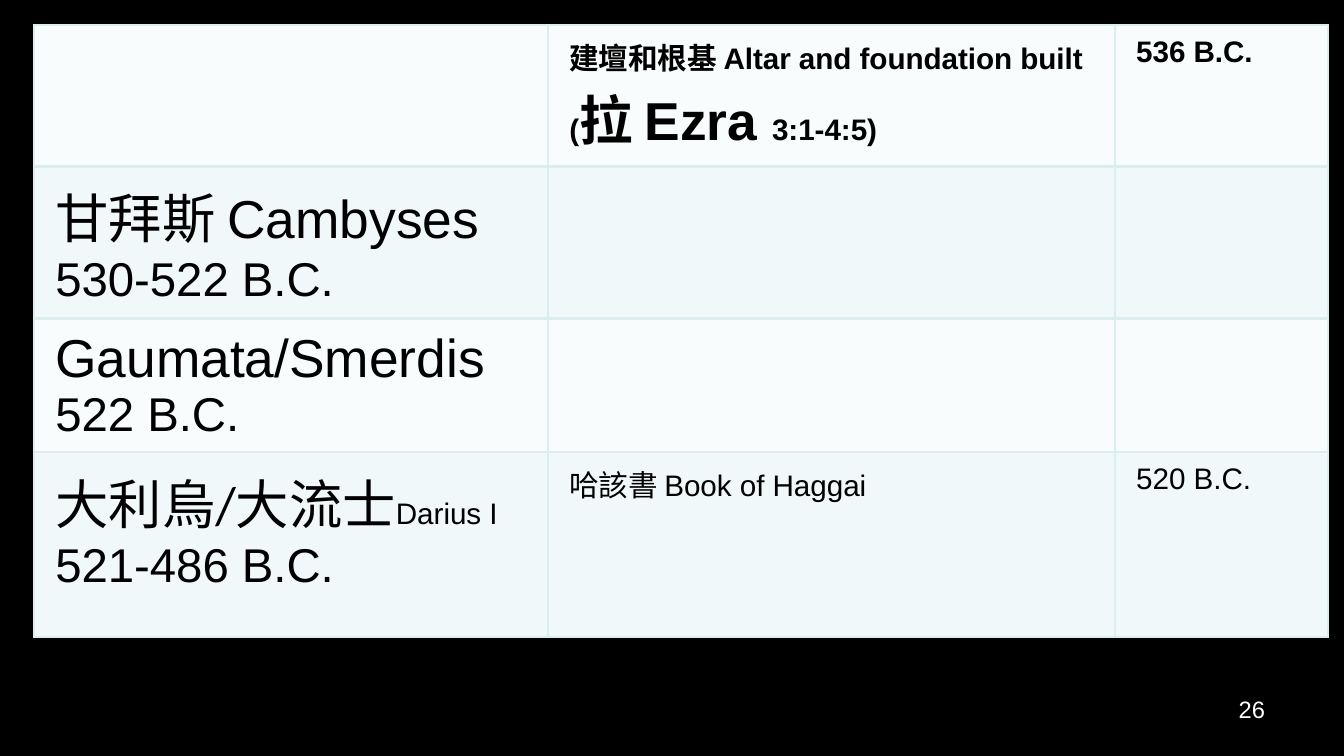
from dataclasses import dataclass

from lxml.etree import SubElement
from pptx import Presentation
from pptx.dml.color import RGBColor
from pptx.enum.text import PP_ALIGN as Align
from pptx.oxml.ns import qn
from pptx.util import Emu, Pt

EMU_PER_PX = 4286.25
COLORS = {
    "background": "000000",
    "text": "000000",
    "number": "FFFFFF",
    "border": "DAEDEF",
    "light": "F8FCFC",
    "tint": "F1F8F9",
}
LATIN, HAN = "Arial", "Calibri"
COL_WIDTHS = [514, 567, 213]
ROW_HEIGHTS = [141, 152, 133, 185]


@dataclass(frozen=True)
class Run:
    text: str
    size: int = 10
    font: str = LATIN
    bold: bool = False


@dataclass(frozen=True)
class Entry:
    row: int
    col: int
    lines: list[list[Run]]


ENTRIES = [
    Entry(0, 1, [[
        Run("建壇和根基 ", font=HAN, bold=True),
        Run("Altar and foundation built (", bold=True),
        Run("拉 ", 18, HAN, True),
        Run("Ezra ", 18, bold=True),
        Run("3:1-4:5)", bold=True),
    ]]),
    Entry(0, 2, [[Run("536 B.C.", bold=True)]]),
    Entry(1, 0, [[Run("甘拜斯 ", 18, HAN), Run("Cambyses", 18)],
                 [Run("530-522 B.C.", 16)]]),
    Entry(2, 0, [[Run("Gaumata/Smerdis", 18)], [Run("522 B.C.", 16)]]),
    Entry(3, 0, [[Run("大利烏/大流士", 18, HAN), Run("Darius I")],
                 [Run("521-486 B.C.", 16)]]),
    Entry(3, 1, [[Run("哈該書 ", font=HAN), Run("Book of Haggai")]]),
    Entry(3, 2, [[Run("520 B.C.")]]),
]


def px(n: int) -> Emu:
    return Emu(round(n * EMU_PER_PX))


def rgb(name: str) -> RGBColor:
    return RGBColor.from_string(COLORS[name])


def add_text(p, text: str, *, size: int = 10, font: str = LATIN,
             bold: bool = False, color: str = "text") -> None:
    r = p.add_run()
    r.text = text
    r.font.size = Pt(size)
    r.font.name = font
    r.font.bold = bold
    r.font.color.rgb = rgb(color)


def style_cell(cell, fill: str) -> None:
    tc_pr = cell._tc.get_or_add_tcPr()
    for side in ("lnL", "lnR", "lnT", "lnB"):
        ln = SubElement(tc_pr, qn(f"a:{side}"), w=str(Pt(1)))
        solid = SubElement(ln, qn("a:solidFill"))
        SubElement(solid, qn("a:srgbClr"), val=COLORS["border"])
    cell.fill.solid()
    cell.fill.fore_color.rgb = rgb(fill)


def add_timeline(slide) -> None:
    frame = slide.shapes.add_table(
        len(ROW_HEIGHTS), len(COL_WIDTHS), px(34), px(25),
        px(sum(COL_WIDTHS)), px(sum(ROW_HEIGHTS)))
    table = frame.table
    table.first_row = table.horz_banding = False
    for column, width in zip(table.columns, COL_WIDTHS):
        column.width = px(width)
    for i, (row, height) in enumerate(zip(table.rows, ROW_HEIGHTS)):
        row.height = px(height)
        for cell in row.cells:
            style_cell(cell, "tint" if i % 2 else "light")
    for entry in ENTRIES:
        tf = table.cell(entry.row, entry.col).text_frame
        for i, line in enumerate(entry.lines):
            p = tf.add_paragraph() if i else tf.paragraphs[0]
            for run in line:
                add_text(p, run.text, size=run.size, font=run.font, bold=run.bold)


def add_page_number(slide) -> None:
    sp = slide.shapes.add_textbox(px(964), px(689), px(314), px(51))
    tf = sp.text_frame
    tf.word_wrap = True
    tf.margin_left = tf.margin_right = px(13)
    tf.margin_top = tf.margin_bottom = px(6)
    p = tf.paragraphs[0]
    p.alignment = Align.RIGHT
    add_text(p, "26", size=8, color="number")


def main() -> None:
    prs = Presentation()
    prs.slide_width, prs.slide_height = px(1344), px(756)
    slide = prs.slides.add_slide(prs.slide_layouts[6])

    # Background
    slide.background.fill.solid()
    slide.background.fill.fore_color.rgb = rgb("background")

    # Table of kings and events, then the page number
    add_timeline(slide)
    add_page_number(slide)
    prs.save("out.pptx")


if __name__ == "__main__":
    main()
